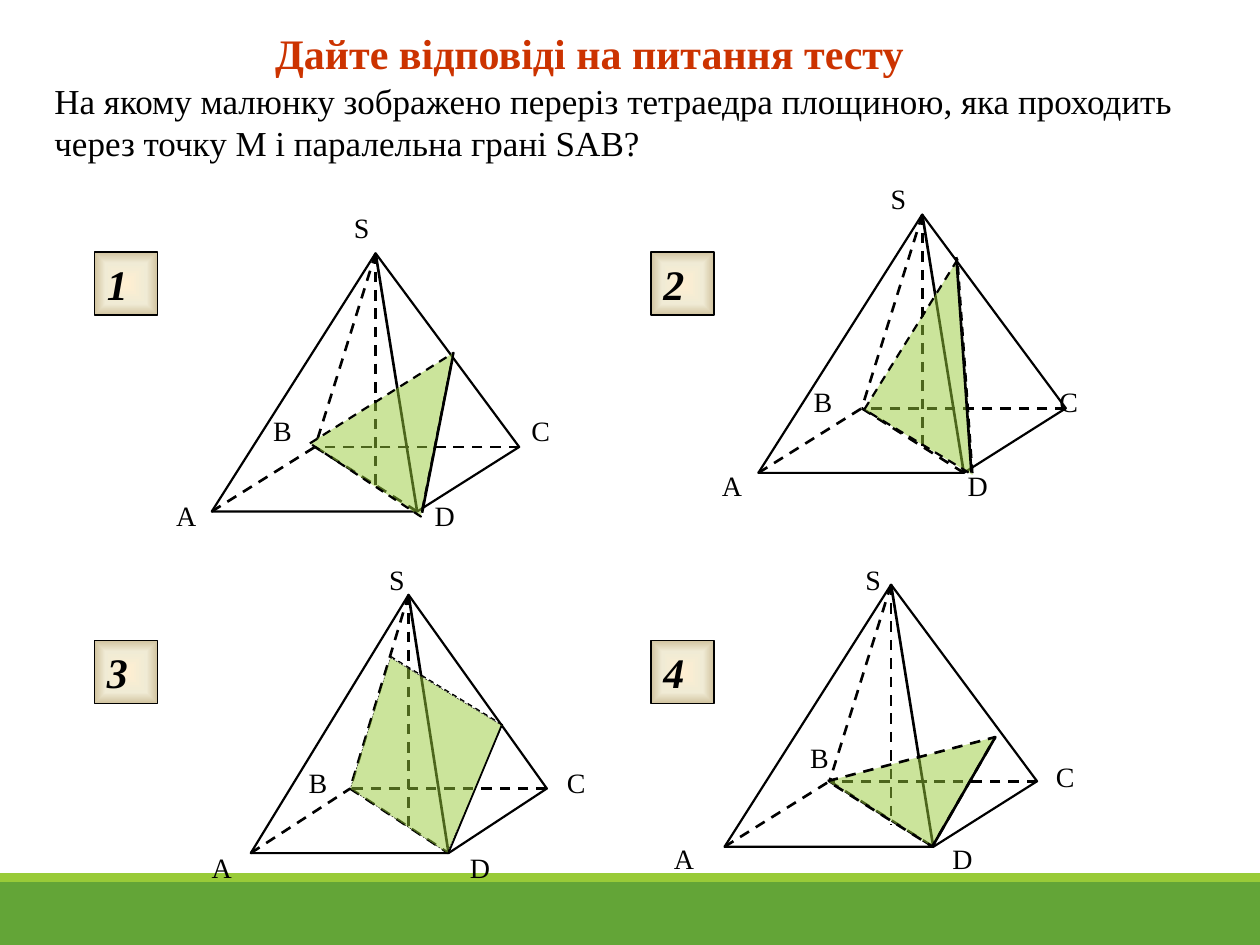
import lxml.etree
import pptx
import pptx.dml.color
import pptx.enum.dml
import pptx.enum.shapes
import pptx.enum.text
import pptx.oxml
import pptx.oxml.ns
import pptx.util

Pt = pptx.util.Pt
SHAPES = pptx.enum.shapes.MSO_SHAPE
ANCHORS = pptx.enum.text.MSO_ANCHOR
DASH = pptx.enum.dml.MSO_LINE.DASH

COLOURS = {
    "ink": "000000",
    "title": "CC3300",
    "section": "99CB38",
    "band": "63A537",
    "button_centre": "FFEFD1",
    "button_middle": "F0EBD5",
    "button_edge": "D1C39F",
}
LABEL = {"size": Pt(16)}
QUESTION = {"size": Pt(20)}
TITLE = {"size": Pt(24), "bold": True}
NUMBER = {"size": Pt(24), "bold": True, "italic": True}

PYRAMIDS = [
    {
        "frame": (121, 144.7, 175.7, 147.6),
        "labels": {"S": (195.1, 116.6), "A": (93.6, 281.5), "B": (149, 232.6),
                   "C": (296.6, 232.6), "D": (241.2, 281.5)},
        "section": [(177.1, 253.4), (259.2, 201.6), (240.5, 295.2)],
        "outline": 1.25,
        "edges": [((241.2, 293), (258.5, 205.2), 1.5, False)],
    },
    {
        "frame": (433.4, 122.6, 175.7, 147.6),
        "labels": {"S": (501.8, 100.1), "A": (405.4, 264.2), "B": (457.9, 216),
                   "C": (598.3, 216), "D": (545.8, 264.2)},
        "section": [(493.9, 234), (547.2, 148.3), (555.8, 271.4)],
        "outline": 1.25,
        "edges": [((555.1, 270), (546.5, 146.9), 1.5, False)],
    },
    {
        "frame": (143.3, 339.9, 169.2, 147.6),
        "labels": {"S": (215.3, 318.2), "A": (113.8, 482.4), "B": (169.2, 434.2),
                   "C": (316.8, 434.2), "D": (261.4, 482.4)},
        "section": [(223.2, 375.8), (287, 414.7), (255.6, 487.4), (200.2, 450.7)],
        "outline": 0.25,
        "edges": [((256.3, 487.4), (286.6, 414.7), 1, False),
                  ((223.2, 375.1), (288, 414.7), 0.75, True)],
    },
    {
        "frame": (414, 334.1, 178.6, 149.8),
        "labels": {"S": (487.4, 318.2), "A": (378, 477.4), "B": (455.8, 419.8),
                   "C": (596.2, 430.6), "D": (537.1, 477.4)},
        "section": [(473, 446.4), (568.8, 421.2), (532.8, 483.8)],
        "outline": 1.5,
        "edges": [((532.8, 483.8), (568.8, 421.2), 1.5, False)],
    },
]


def colour(name):
    return pptx.dml.color.RGBColor.from_string(COLOURS[name])


def apply_format(target, values):
    for name, value in values.items():
        setattr(target, name, value)


def format_line(line, width, dashed=False):
    line.color.rgb = colour("ink")
    line.width = Pt(width)
    if dashed:
        line.dash_style = DASH


def write_text(shape, text, font_values, ink="ink", wrap=True, anchor=ANCHORS.TOP):
    frame = shape.text_frame
    apply_format(frame, {"text": text, "word_wrap": wrap, "vertical_anchor": anchor,
                         "auto_size": pptx.enum.text.MSO_AUTO_SIZE.NONE})
    paragraph = frame.paragraphs[0]
    paragraph.alignment = pptx.enum.text.PP_ALIGN.LEFT
    font = paragraph.runs[0].font
    apply_format(font, {"name": "Times New Roman", **font_values})
    font.color.rgb = colour(ink)


def add_title(slide, text):
    title = slide.shapes.title
    apply_format(title, {"left": Pt(150), "top": Pt(12), "width": Pt(432), "height": Pt(36)})
    write_text(title, text, TITLE, "title")


def add_text(shapes, text, left, top, width, height, font_values):
    box = shapes.add_textbox(Pt(left), Pt(top), Pt(width), Pt(height))
    write_text(box, text, font_values)


def add_band(slide, top, height, fill):
    band = slide.shapes.add_shape(SHAPES.RECTANGLE, 0, Pt(top), Pt(720), Pt(height))
    band.shadow.inherit = False
    band.fill.solid()
    band.fill.fore_color.rgb = colour(fill)
    band.line.fill.background()


def add_line(shapes, start, end, width, dashed):
    points = [Pt(value) for value in (*start, *end)]
    line = shapes.add_connector(pptx.enum.shapes.MSO_CONNECTOR.STRAIGHT, *points)
    format_line(line.line, width, dashed)
    lxml.etree.SubElement(line._element.spPr, pptx.oxml.ns.qn("a:effectLst"))


def add_polygon(shapes, points, width, dashed=False, fill=None):
    corners = [(Pt(x), Pt(y)) for x, y in points]
    builder = shapes.build_freeform(*corners[0])
    builder.add_line_segments(corners[1:], close=True)
    polygon = builder.convert_to_shape()
    polygon.shadow.inherit = False
    format_line(polygon.line, width, dashed)
    if fill is None:
        polygon.fill.background()
        return
    polygon.fill.solid()
    polygon.fill.fore_color.rgb = colour(fill)
    solid = polygon._element.spPr.find(pptx.oxml.ns.qn("a:solidFill"))
    lxml.etree.SubElement(solid[0], pptx.oxml.ns.qn("a:alpha"), val="50000")


def add_pyramid(slide, pyramid):
    shapes = slide.shapes.add_group_shape().shapes
    left, top, width, height = pyramid["frame"]

    def point(across, down):
        return left + across * width, top + down * height

    apex, foot = point(0.533, 0), point(0.533, 0.917)
    a, b, c, d = point(0, 1), point(0.336, 0.75), point(1, 0.75), point(0.668, 1)
    add_polygon(shapes, [a, apex, c, d], 1.25)
    add_line(shapes, apex, d, 1.5, False)
    for start, end in [(apex, b), (c, b), (a, b), (b, d), (apex, foot)]:
        add_line(shapes, start, end, 1.5, True)
    add_polygon(shapes, pyramid["section"], pyramid["outline"], True, "section")
    for edge in pyramid["edges"]:
        add_line(shapes, *edge)
    for letter, (x, y) in pyramid["labels"].items():
        add_text(shapes, letter, x, y, 40, 26.6, LABEL)


def fill_from_centre(shape, stops):
    stop_xml = "".join(
        f'<a:gs pos="{position * 1000}"><a:srgbClr val="{COLOURS[name]}"/></a:gs>'
        for position, name in stops)
    gradient = pptx.oxml.parse_xml(
        f'<a:gradFill {pptx.oxml.ns.nsdecls("a")} rotWithShape="1"><a:gsLst>{stop_xml}</a:gsLst>'
        '<a:path path="rect"><a:fillToRect l="50000" t="50000" r="50000" b="50000"/></a:path>'
        '</a:gradFill>')
    shape._element.spPr.find(pptx.oxml.ns.qn("a:prstGeom")).addnext(gradient)


def add_number_button(slide, number, left, top):
    button = slide.shapes.add_shape(SHAPES.ACTION_BUTTON_CUSTOM, Pt(left), Pt(top), Pt(36), Pt(36))
    button.shadow.inherit = False
    fill_from_centre(button, [(0, "button_centre"), (65, "button_middle"), (100, "button_edge")])
    format_line(button.line, 0.75)
    write_text(button, str(number), NUMBER, wrap=False, anchor=ANCHORS.MIDDLE)


def main():
    presentation = pptx.Presentation()
    apply_format(presentation, {"slide_width": Pt(720), "slide_height": Pt(540)})
    slide = presentation.slides.add_slide(presentation.slide_layouts[5])
    add_title(slide, "Дайте відповіді на питання тесту")
    add_band(slide, 504, 36, "band")
    add_band(slide, 499, 5, "section")
    add_text(slide.shapes, "На якому малюнку зображено переріз тетраедра площиною, "
             "яка проходить через точку М і паралельна грані SAВ?", 24, 42, 678, 55.4, QUESTION)
    for index, pyramid in enumerate(PYRAMIDS):
        row, column = divmod(index, 2)
        add_pyramid(slide, pyramid)
        add_number_button(slide, index + 1, 54 + 318 * column, 144 + 222 * row)
    presentation.save("out.pptx")


if __name__ == "__main__":
    main()
